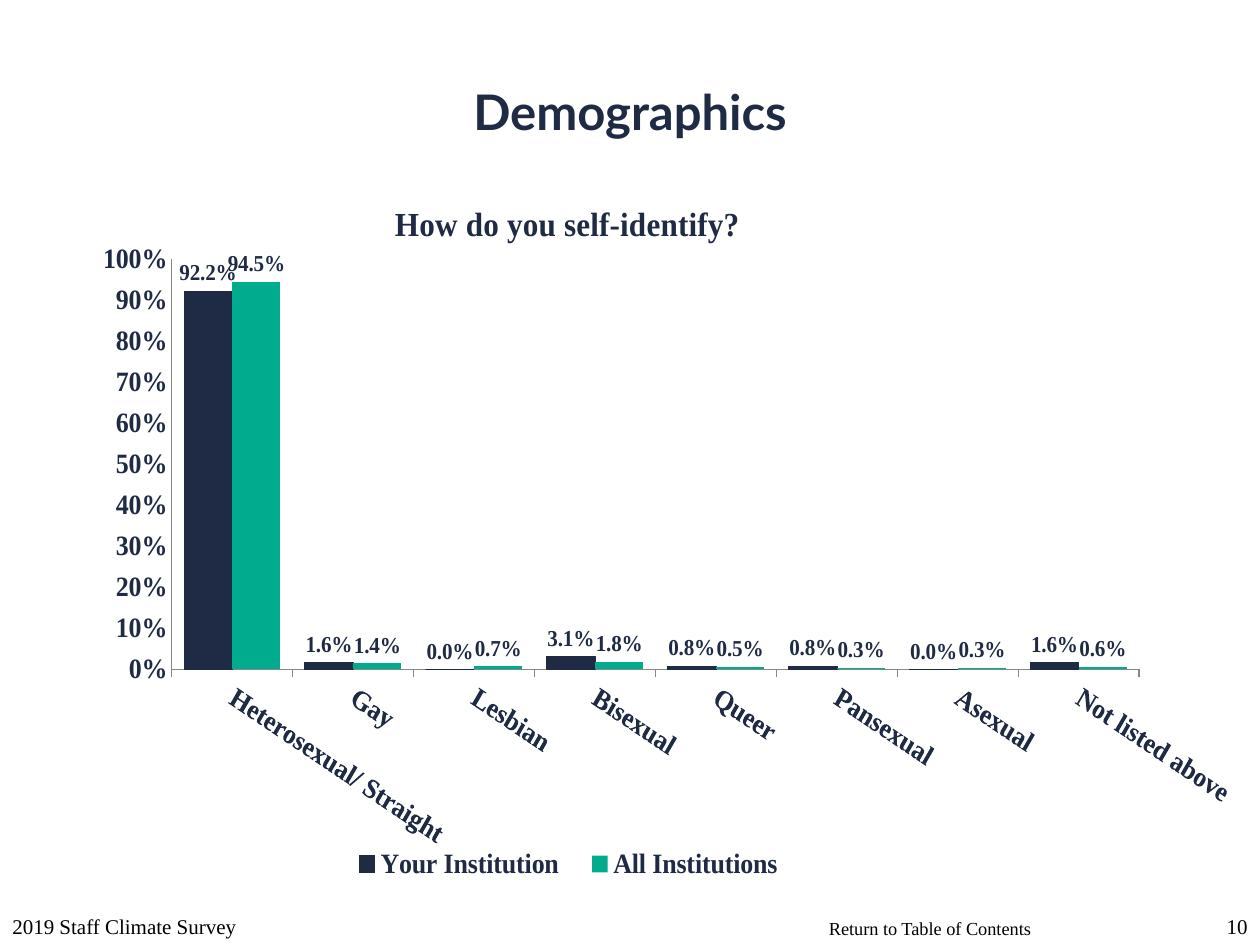
from lxml import etree
from pptx import Presentation
from pptx.chart.data import CategoryChartData
from pptx.dml.color import RGBColor
from pptx.enum import chart as charts, text
from pptx.oxml.ns import qn
from pptx.util import Cm, Pt

SERIF = "Times New Roman"
NAVY, GREEN, GREY, BLACK = "1F2A44", "00AB8E", "868686", "000000"
CATEGORIES = ["Heterosexual/ Straight", "Gay", "Lesbian", "Bisexual",
              "Queer", "Pansexual", "Asexual", "Not listed above"]
SERIES = [
    ("Your Institution", NAVY, [0.922, 0.016, 0, 0.031, 0.008, 0.008, 0, 0.016]),
    ("All Institutions", GREEN, [0.945, 0.014, 0.007, 0.018, 0.005, 0.003, 0.003, 0.006]),
]


def color(value):
    return RGBColor.from_string(value)


def style_font(font, name, size, value, bold=False):
    font.name, font.size, font.bold = name, Pt(size), bold
    font.color.rgb = color(value)


def place_chart_part(element, inner=False, **values):
    """Give a chart part a manual layout, in fractions of the chart area."""
    for old in element.findall(qn("c:layout")):
        element.remove(old)
    layout = etree.Element(qn("c:layout"))
    manual = etree.SubElement(layout, qn("c:manualLayout"))
    if inner:
        etree.SubElement(manual, qn("c:layoutTarget")).set("val", "inner")
    for key in ("x", "y"):
        etree.SubElement(manual, qn(f"c:{key}Mode")).set("val", "edge")
    for key, value in values.items():
        etree.SubElement(manual, qn(f"c:{key}")).set("val", str(value))
    overlay = element.find(qn("c:overlay"))
    if overlay is None:
        element.insert(0, layout)
    else:
        overlay.addprevious(layout)


def add_heading(slide, box):
    title = slide.shapes.title
    title.left, title.top, title.width, title.height = box
    frame = title.text_frame
    frame.vertical_anchor = text.MSO_ANCHOR.MIDDLE
    paragraph = frame.paragraphs[0]
    paragraph.alignment = text.PP_ALIGN.CENTER
    run = paragraph.add_run()
    run.text = "Demographics"
    style_font(run.font, "Lato", 28, NAVY, True)


def format_axes(chart):
    category_axis, value_axis = chart.category_axis, chart.value_axis
    for axis in (category_axis, value_axis):
        axis.has_major_gridlines = False
        axis.format.line.color.rgb = color(GREY)
        style_font(axis.tick_labels.font, SERIF, 16, NAVY, True)
    category_axis.major_tick_mark = charts.XL_TICK_MARK.OUTSIDE
    label_body = category_axis._element.find(qn("c:txPr")).find(qn("a:bodyPr"))
    label_body.set("rot", str(32 * 60000))
    value_axis.major_tick_mark = charts.XL_TICK_MARK.NONE
    value_axis.minimum_scale, value_axis.maximum_scale = 0, 1
    value_axis.major_unit = 0.1
    value_axis.tick_labels.number_format = "0%"
    value_axis.tick_labels.number_format_is_linked = False


def format_series(plot):
    plot.gap_width, plot.overlap = 50, 0
    plot.vary_by_categories = False
    for series, (_, fill, _) in zip(plot.series, SERIES):
        series.format.fill.solid()
        series.format.fill.fore_color.rgb = color(fill)
        labels = series.data_labels
        labels.show_value = True
        labels.position = charts.XL_LABEL_POSITION.OUTSIDE_END
        labels.number_format = "0.0%"
        labels.number_format_is_linked = False
        style_font(labels.font, SERIF, 13, NAVY, True)
    outline = plot.series[0].format.line
    outline.color.rgb = color(NAVY)
    outline.width = Pt(0.25)


def add_identity_chart(slide, box):
    data = CategoryChartData(number_format="0.0%")
    data.categories = CATEGORIES
    for name, _, values in SERIES:
        data.add_series(name, values)
    chart = slide.shapes.add_chart(
        charts.XL_CHART_TYPE.COLUMN_CLUSTERED, *box, data).chart
    style_font(chart.font, SERIF, 16, NAVY, True)

    chart.has_title = True
    run = chart.chart_title.text_frame.paragraphs[0].add_run()
    run.text = "How do you self-identify?"
    style_font(run.font, SERIF, 19.2, NAVY, True)
    place_chart_part(chart.chart_title._element, x=0.3, y=0)

    chart.has_legend = True
    legend = chart.legend
    legend.position = charts.XL_LEGEND_POSITION.BOTTOM
    legend.include_in_layout = False
    style_font(legend.font, SERIF, 16, NAVY, True)
    place_chart_part(legend._element, x=0.25, y=0.92, w=0.43, h=0.08)

    format_axes(chart)
    format_series(chart.plots[0])
    plot_area = chart._chartSpace.find(qn("c:chart")).find(qn("c:plotArea"))
    place_chart_part(plot_area, inner=True, x=0.1, y=0.09, w=0.89, h=0.59)


def add_footer_text(slide, box, words, size=12, align=text.PP_ALIGN.LEFT, wrap=True):
    frame = slide.shapes.add_textbox(*box).text_frame
    frame.word_wrap = wrap
    frame.vertical_anchor = text.MSO_ANCHOR.BOTTOM
    paragraph = frame.paragraphs[0]
    paragraph.alignment = align
    run = paragraph.add_run()
    run.text = words
    style_font(run.font, SERIF, size, BLACK)


def add_footer(slide, left, top, width, height):
    number_width = Cm(1.27)
    add_footer_text(slide, (left, top, Cm(8.05), height), "2019 Staff Climate Survey")
    add_footer_text(slide, (left + Cm(16.46), top + Cm(0.56), Cm(4.62), Cm(0.71)),
                    "Return to Table of Contents", size=10.5, wrap=False)
    add_footer_text(slide, (left + width - number_width, top, number_width, height),
                    "10", align=text.PP_ALIGN.RIGHT)


def main():
    presentation = Presentation()
    presentation.slide_width, presentation.slide_height = Cm(25.4), Cm(19.05)
    slide = presentation.slides.add_slide(presentation.slide_layouts[5])
    add_heading(slide, (Cm(0), Cm(0.64), Cm(25.4), Cm(3.18)))
    add_identity_chart(slide, (Cm(1.27), Cm(3.96), Cm(23.62), Cm(14.02)))
    add_footer(slide, Cm(0), Cm(17.78), Cm(25.4), Cm(1.27))
    presentation.save("out.pptx")


if __name__ == "__main__":
    main()
